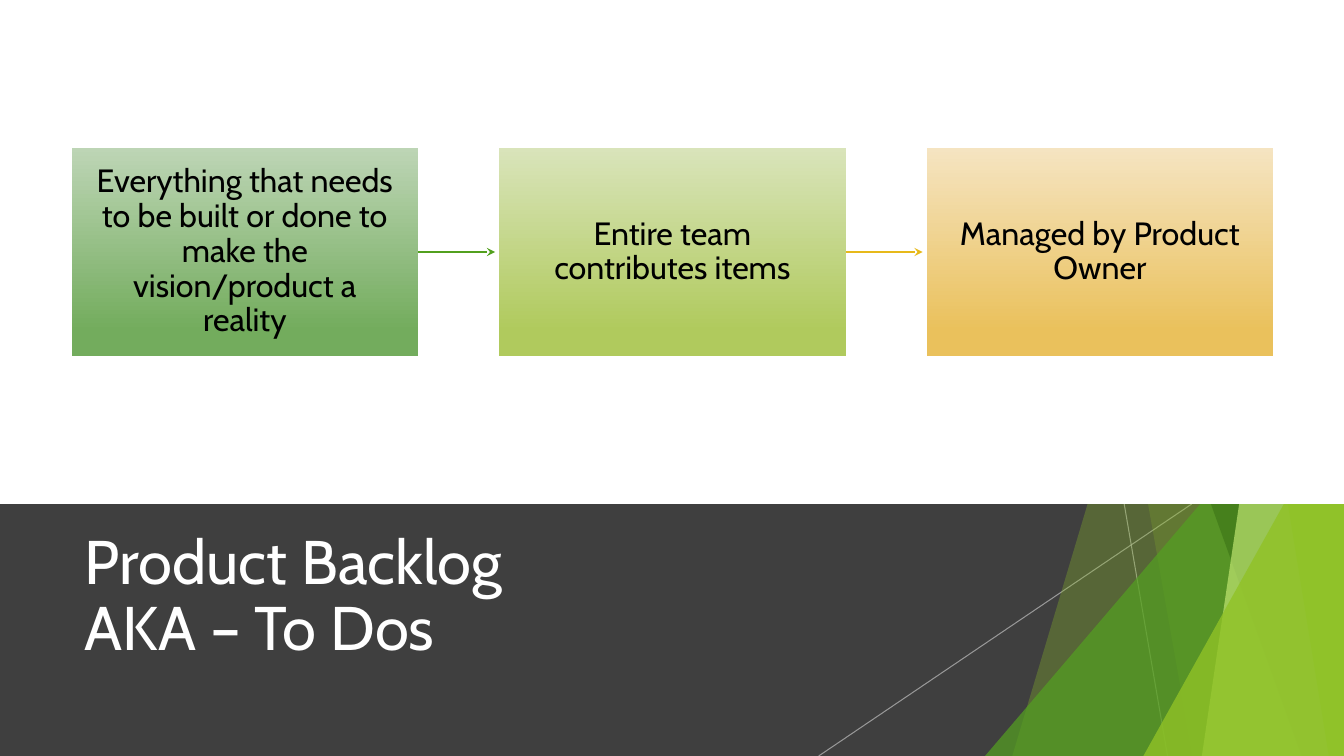
from dataclasses import dataclass
from typing import Any

from lxml import etree
from pptx import Presentation
from pptx.dml.color import RGBColor
from pptx.enum.shapes import MSO_CONNECTOR, MSO_SHAPE
from pptx.enum.text import MSO_ANCHOR, MSO_AUTO_SIZE, PP_ALIGN
from pptx.oxml.ns import qn
from pptx.util import Inches, Pt

RECTANGLE = MSO_SHAPE.RECTANGLE
TRIANGLE = MSO_SHAPE.ISOSCELES_TRIANGLE
STRAIGHT = MSO_CONNECTOR.STRAIGHT
MIDDLE = MSO_ANCHOR.MIDDLE
NO_AUTOFIT = MSO_AUTO_SIZE.NONE
LEFT, CENTER = PP_ALIGN.LEFT, PP_ALIGN.CENTER
RIGHT_SIDE = 3

SLIDE_W, SLIDE_H = 13.33, 7.5
PANEL_TOP = 5
STEP_LEFT, STEP_TOP, STEP_W, STEP_H = 0.71, 1.47, 3.44, 2.06
STEP_PITCH = 4.24
ARROW_LENGTH = 0.76
FONT = "Cabin"


@dataclass
class Facet:
    top_x: float
    bottom_x: float
    color: str
    alpha: int


@dataclass
class Wedge:
    left: float
    top: float
    color: str
    alpha: int


@dataclass
class Ray:
    top_x: float
    bottom_x: float


@dataclass
class Step:
    text: str
    light: str
    dark: str
    arrow: str = ""


DECOR = [
    Ray(11.15, 11.58),
    Ray(11.82, 8.12),
    Facet(12.28, 10.04, "90C226", 30),
    Facet(10.5, 11.83, "90C226", 20),
    Wedge(9.77, 3.33, "54A021", 72),
    Facet(10.21, 12.91, "3F7818", 70),
    Facet(13.03, 11.92, "BFE471", 70),
    Facet(11.96, 13.18, "90C226", 65),
    Wedge(11.34, 3.93, "90C226", 80),
]

STEPS = [
    Step("Everything that needs to be built or done to make the vision/product a reality",
         "BDD5B5", "73AC5D", "52A01E"),
    Step("Entire team contributes items", "D9E4BA", "B0CA5D", "E7B91A"),
    Step("Managed by Product Owner", "F5E4C1", "EAC15C"),
]


def rgb(color: str) -> RGBColor:
    return RGBColor.from_string(color)


def apply_format(target: Any, values: dict[str, Any]) -> None:
    for name, value in values.items():
        setattr(target, name, value)


def set_alpha(part: Any, percent: int) -> None:
    for color in part.iter(qn("a:srgbClr")):
        etree.SubElement(color, qn("a:alpha")).set("val", str(percent * 1000))


def fill_solid(shape: Any, color: str, alpha: int = 100) -> None:
    shape.shadow.inherit = False
    shape.fill.solid()
    shape.fill.fore_color.rgb = rgb(color)
    shape.line.fill.background()
    if alpha < 100:
        set_alpha(shape.fill._xPr, alpha)


def add_preset(slide: Any, kind: Any, left: float, top: float, width: float, height: float) -> Any:
    return slide.shapes.add_shape(kind, Inches(left), Inches(top), Inches(width), Inches(height))


def add_line(slide: Any, x1: float, y1: float, x2: float, y2: float, color: str, weight: float) -> Any:
    line = slide.shapes.add_connector(STRAIGHT, Inches(x1), Inches(y1), Inches(x2), Inches(y2))
    line.line.color.rgb = rgb(color)
    line.line.width = Pt(weight)
    etree.SubElement(line._element.spPr, qn("a:effectLst"))
    return line


def draw_decor(slide: Any, item: Facet | Wedge | Ray) -> None:
    if isinstance(item, Ray):
        ray = add_line(slide, item.top_x, PANEL_TOP, item.bottom_x, SLIDE_H, "BFBFBF", 0.75)
        set_alpha(ray._element.spPr, 70)
        return
    if isinstance(item, Wedge):
        outline = add_preset(slide, TRIANGLE, item.left, item.top,
                             SLIDE_W - item.left, SLIDE_H - item.top)
        outline.adjustments[0] = 1
    else:
        corners = [(SLIDE_W, 0), (SLIDE_W, SLIDE_H), (item.bottom_x, SLIDE_H)]
        builder = slide.shapes.build_freeform(Inches(item.top_x), 0)
        builder.add_line_segments([(Inches(x), Inches(y)) for x, y in corners], close=True)
        outline = builder.convert_to_shape()
    fill_solid(outline, item.color, item.alpha)


def write_text(shape: Any, text: str, size: float, color: str, align: Any,
               inset_x: float, inset_y: float) -> None:
    frame = shape.text_frame
    frame.text = text
    apply_format(frame, {
        "word_wrap": True, "auto_size": NO_AUTOFIT, "vertical_anchor": MIDDLE,
        "margin_left": Inches(inset_x), "margin_right": Inches(inset_x),
        "margin_top": Inches(inset_y), "margin_bottom": Inches(inset_y),
    })
    paragraph = frame.paragraphs[0]
    apply_format(paragraph, {"alignment": align, "line_spacing": 0.9})
    for run in paragraph.runs:
        apply_format(run.font, {"name": FONT, "size": Pt(size)})
        run.font.color.rgb = rgb(color)


def draw_step(slide: Any, step: Step, left: float) -> None:
    box = add_preset(slide, RECTANGLE, left, STEP_TOP, STEP_W, STEP_H)
    box.shadow.inherit = False
    box.line.fill.background()
    box.fill.gradient()
    box.fill.gradient_angle = 270
    for stop, position, color in zip(box.fill.gradient_stops, (0, 0.88), (step.light, step.dark)):
        stop.position = position
        stop.color.rgb = rgb(color)
    write_text(box, step.text, 23, "000000", CENTER, 0.17, 0.18)
    if step.arrow:
        start, middle = left + STEP_W, STEP_TOP + STEP_H / 2
        arrow = add_line(slide, start, middle, start + ARROW_LENGTH, middle, step.arrow, 1)
        arrow.begin_connect(box, RIGHT_SIDE)
        etree.SubElement(arrow.line._get_or_add_ln(), qn("a:tailEnd")).set("type", "stealth")


def main() -> None:
    deck = Presentation()
    apply_format(deck, {"slide_width": Inches(SLIDE_W), "slide_height": Inches(SLIDE_H)})
    slide = deck.slides.add_slide(deck.slide_layouts[5])

    title_panel = add_preset(slide, RECTANGLE, 0, PANEL_TOP, SLIDE_W, SLIDE_H - PANEL_TOP)
    fill_solid(title_panel, "3F3F3F")
    for item in DECOR:
        draw_decor(slide, item)

    title = slide.shapes.title
    apply_format(title, {"left": Inches(0.74), "top": Inches(5.21),
                         "width": Inches(9.4), "height": Inches(1.44)})
    write_text(title, "Product Backlog\vAKA – To Dos", 44, "FFFFFF", LEFT, 0.1, 0.05)
    slide.shapes._spTree.append(title._element)

    steps_panel = add_preset(slide, RECTANGLE, 0, 0, SLIDE_W, PANEL_TOP)
    fill_solid(steps_panel, "FFFFFF")
    for index, step in enumerate(STEPS):
        draw_step(slide, step, STEP_LEFT + index * STEP_PITCH)

    deck.save("out.pptx")


if __name__ == "__main__":
    main()
